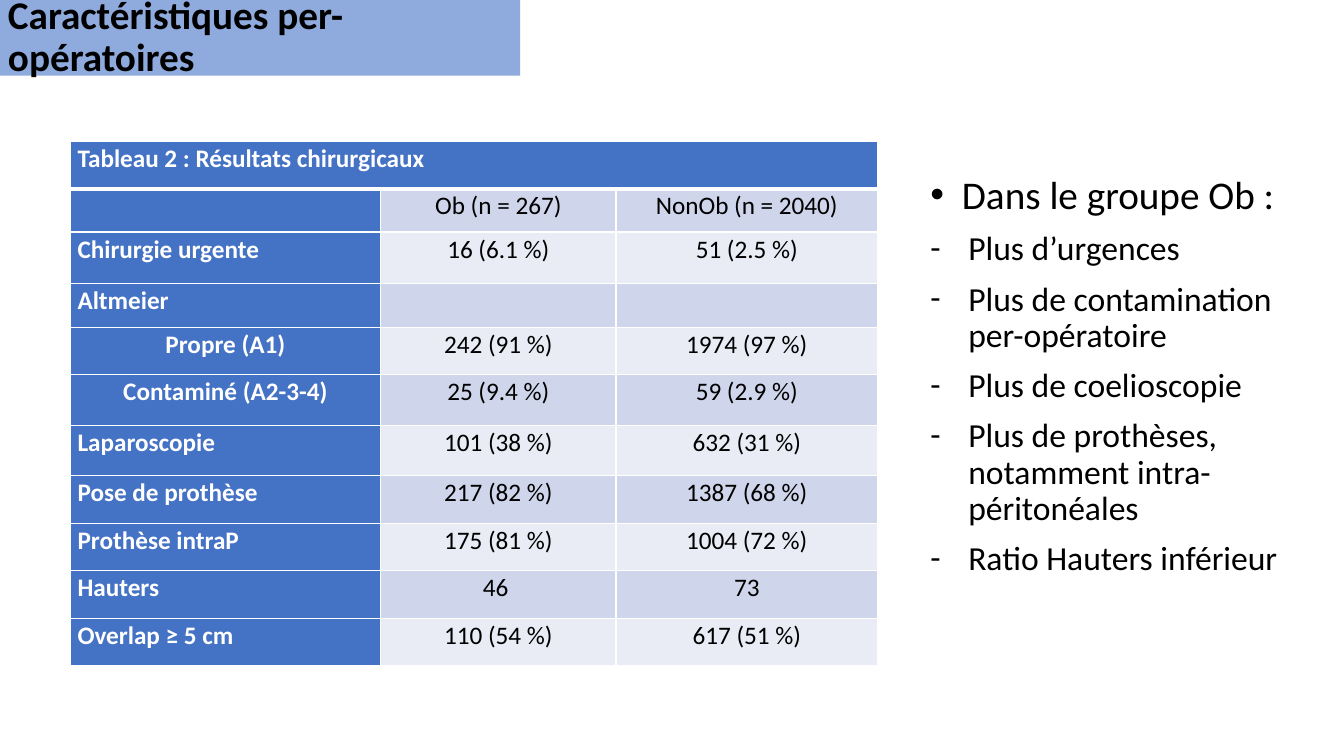
from lxml.etree import SubElement
from pptx import Presentation
from pptx.dml.color import RGBColor
from pptx.enum.text import MSO_ANCHOR, MSO_AUTO_SIZE, PP_ALIGN
from pptx.oxml.ns import qn
from pptx.util import Pt

FONT = "Calibri"
BLACK, WHITE = "000000", "FFFFFF"
BANNER, HEADER, BANDS = "8FAADC", "4472C4", ("CFD5EA", "E9EBF5")
COLUMN_WIDTHS = (222, 168, 187)
ROW_HEIGHTS = (34, 31, 36.5, 31.5, 34, 36, 36, 34, 34, 34, 34)
CENTRED_LABELS = ("Propre (A1)", "Contaminé (A2-3-4)")
RESULTS = [
    ("Tableau 2\u00a0: Résultats chirurgicaux", "", ""),
    ("", "Ob (n = 267)", "NonOb (n = 2040)"),
    ("Chirurgie urgente", "16 (6.1 %)", "51 (2.5 %)"),
    ("Altmeier", "", ""),
    ("Propre (A1)", "242 (91 %)", "1974 (97 %)"),
    ("Contaminé (A2-3-4)", "25 (9.4 %)", "59 (2.9 %)"),
    ("Laparoscopie", "101 (38 %)", "632 (31 %)"),
    ("Pose de prothèse", "217 (82 %)", "1387 (68 %)"),
    ("Prothèse intraP", "175 (81 %)", "1004 (72 %)"),
    ("Hauters", "46 ", "73"),
    ("Overlap ≥ 5 cm", "110 (54 %)", "617 (51 %)"),
]
FINDINGS = [
    "Dans le groupe Ob :",
    "Plus d’urgences",
    "Plus de contamination per-opératoire",
    "Plus de coelioscopie",
    "Plus de prothèses, notamment intra-péritonéales",
    "Ratio Hauters inférieur",
]


def rgb(hex_code):
    return RGBColor.from_string(hex_code)


def apply(target, formats):
    for name, value in formats.items():
        setattr(target, name, value)


def place(part, box):
    names = ("left", "top", "width", "height")
    apply(part, {name: Pt(length) for name, length in zip(names, box)})


def paint(part, colour):
    part.fill.solid()
    part.fill.fore_color.rgb = rgb(colour)


def write(paragraph, text, size, colour=BLACK, bold=False, **layout):
    apply(paragraph, layout)
    run = paragraph.add_run()
    run.text = text
    apply(run.font, {"name": FONT, "size": Pt(size), "bold": bold})
    run.font.color.rgb = rgb(colour)


def set_bullet(paragraph, mark, indent):
    properties = paragraph._p.get_or_add_pPr()
    properties.set("marL", str(Pt(indent)))
    properties.set("indent", str(-Pt(indent)))
    SubElement(properties, qn("a:buFont"), typeface="Arial" if mark == "•" else FONT)
    SubElement(properties, qn("a:buChar"), char=mark)


def set_borders(cell, widths):
    properties = cell._tc.get_or_add_tcPr()
    for side, width in widths.items():
        line = SubElement(properties, qn(f"a:ln{side}"), w=str(Pt(width)))
        fill = SubElement(line, qn("a:solidFill"))
        SubElement(fill, qn("a:srgbClr"), val=WHITE)


def add_banner(slide, box):
    title = slide.shapes.title
    place(title, box)
    paint(title, BANNER)
    frame = title.text_frame
    apply(frame, {"word_wrap": True, "auto_size": MSO_AUTO_SIZE.NONE,
                  "vertical_anchor": MSO_ANCHOR.MIDDLE})
    write(frame.paragraphs[0], "Caractéristiques per-opératoires", 28, bold=True,
          alignment=PP_ALIGN.LEFT, line_spacing=0.9)


def add_results(slide, left, top):
    frame = slide.shapes.add_table(
        len(RESULTS), len(COLUMN_WIDTHS), Pt(left), Pt(top),
        Pt(sum(COLUMN_WIDTHS)), Pt(sum(ROW_HEIGHTS)))
    table = frame.table
    for column, width in zip(table.columns, COLUMN_WIDTHS):
        column.width = Pt(width)
    for r, (height, values) in enumerate(zip(ROW_HEIGHTS, RESULTS)):
        table.rows[r].height = Pt(height)
        for c, text in enumerate(values):
            cell = table.cell(r, c)
            is_header = r == 0 or c == 0
            # A thicker rule separates the heading from the data
            set_borders(cell, {"L": 1, "R": 1, "T": 3 if r == 1 else 1,
                               "B": 3 if r == 0 else 1})
            paint(cell, HEADER if is_header else BANDS[(r + 1) % 2])
            apply(cell, {"margin_left": Pt(5.4), "margin_right": Pt(5.4),
                         "margin_top": 0, "margin_bottom": 0})
            if text:
                centred = not is_header or text in CENTRED_LABELS
                write(cell.text_frame.paragraphs[0], text, 18,
                      WHITE if is_header else BLACK, is_header,
                      alignment=PP_ALIGN.CENTER if centred else PP_ALIGN.LEFT,
                      line_spacing=1.07, space_after=Pt(8))
    table.cell(0, 0).merge(table.cell(0, len(COLUMN_WIDTHS) - 1))


def add_findings(slide, box):
    body = slide.placeholders[1]
    place(body, box)
    frame = body.text_frame
    apply(frame, {"word_wrap": True, "auto_size": MSO_AUTO_SIZE.SHAPE_TO_FIT_TEXT,
                  "vertical_anchor": MSO_ANCHOR.TOP})
    for i, text in enumerate(FINDINGS):
        paragraph = frame.add_paragraph() if i else frame.paragraphs[0]
        write(paragraph, text, 24 if i else 28, line_spacing=0.9, space_before=Pt(10))
        set_bullet(paragraph, *(("-", 27) if i else ("•", 22.5)))


def main():
    deck = Presentation()
    apply(deck, {"slide_width": Pt(960), "slide_height": Pt(540)})
    slide = deck.slides.add_slide(deck.slide_layouts[1])
    # Title banner
    add_banner(slide, (-1.5, 0, 373, 54))
    # Surgical results table
    add_results(slide, 50, 100.8)
    # Findings in the Ob group
    add_findings(slide, (657.4, 121.7, 263.5, 329))
    deck.save("out.pptx")


if __name__ == "__main__":
    main()
